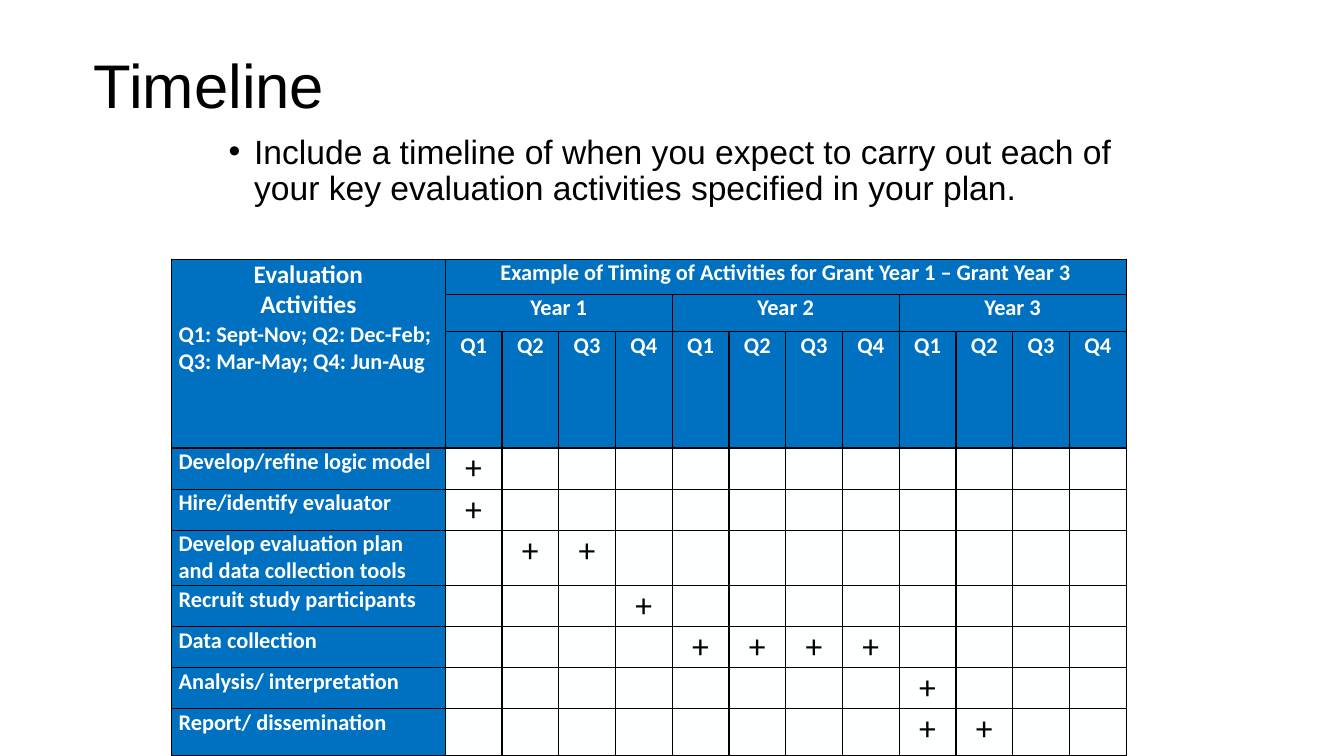
from lxml import etree
from pptx import Presentation
from pptx import util as u
from pptx.dml.color import RGBColor
from pptx.enum import text
from pptx.oxml import ns

BLACK = RGBColor(0x00, 0x00, 0x00)
WHITE = RGBColor(0xFF, 0xFF, 0xFF)
BLUE = RGBColor(0x00, 0x70, 0xC0)
NEAR_WHITE = RGBColor(0xFE, 0xFF, 0xFF)

QUARTERS = 4
YEARS = 3
HEADER_ROWS = 3
ROW_HEIGHTS = [0.89, 0.94, 1.32, 1.02, 1.02, 1.4, 1.02, 1.02, 1.02, 1.19]
ACTIVITY_WIDTH, QUARTER_WIDTH = 6.9, 1.43

# Each activity with the quarters, counted from the start of year 1, it runs in
ACTIVITIES = [
    ("Develop/refine logic model", [1]),
    ("Hire/identify evaluator", [1]),
    ("Develop evaluation plan and data collection tools", [2, 3]),
    ("Recruit study participants", [4]),
    ("Data collection", [5, 6, 7, 8]),
    ("Analysis/ interpretation", [9]),
    ("Report/ dissemination", [9, 10]),
]


class TimelineSlide:
    heading_font = "Arial"
    table_font = "Calibri"

    def __init__(self, presentation):
        self.slide = presentation.slides.add_slide(presentation.slide_layouts[1])

    def format_paragraph(self, paragraph, font_name, size, color, bold=False,
                         align=text.PP_ALIGN.LEFT):
        paragraph.alignment = align
        for run in paragraph.runs:
            run.font.name = font_name
            run.font.size = u.Pt(size)
            run.font.bold = bold
            run.font.color.rgb = color

    def fill_placeholder(self, shape, words, box, size, anchor):
        shape.left, shape.top, shape.width, shape.height = map(u.Cm, box)
        frame = shape.text_frame
        frame.text = words
        frame.auto_size = text.MSO_AUTO_SIZE.NONE
        frame.vertical_anchor = anchor
        paragraph = frame.paragraphs[0]
        paragraph.line_spacing = 0.9
        self.format_paragraph(paragraph, self.heading_font, size, BLACK)
        return paragraph

    def title(self, words, box):
        self.fill_placeholder(self.slide.shapes.title, words, box, 44,
                              text.MSO_ANCHOR.MIDDLE)

    def bullet(self, words, box):
        paragraph = self.fill_placeholder(self.slide.placeholders[1], words, box, 24,
                                          text.MSO_ANCHOR.TOP)
        paragraph.space_before = u.Pt(10)
        properties = paragraph._p.get_or_add_pPr()
        indent = u.Cm(0.64)
        properties.set("marL", str(indent))
        properties.set("indent", str(-indent))
        bullet = etree.SubElement(properties, ns.qn("a:buChar"))
        bullet.set("char", "•")

    def table(self, left, top, row_heights, column_widths):
        """Add a table of empty, bordered cells."""
        table = self.slide.shapes.add_table(
            len(row_heights), len(column_widths), u.Cm(left), u.Cm(top),
            u.Cm(sum(column_widths)), u.Cm(sum(row_heights))).table
        table.first_row = table.horz_banding = False
        for row, height in zip(table.rows, row_heights):
            row.height = u.Cm(height)
        for column, width in zip(table.columns, column_widths):
            column.width = u.Cm(width)
        for cell in table.iter_cells():
            cell.margin_left = cell.margin_right = u.Cm(0.18)
            cell.margin_top = cell.margin_bottom = 0
            self.border(cell)
            self.fill(cell, NEAR_WHITE)
        return table

    def border(self, cell):
        properties = cell._tc.get_or_add_tcPr()
        for side in ("lnL", "lnR", "lnT", "lnB"):
            line = etree.SubElement(properties, ns.qn(f"a:{side}"), w=str(u.Pt(1)))
            fill = etree.SubElement(line, ns.qn("a:solidFill"))
            etree.SubElement(fill, ns.qn("a:srgbClr"), val=str(BLACK))

    def fill(self, cell, color):
        cell.fill.solid()
        cell.fill.fore_color.rgb = color

    def header(self, cell, words, align=text.PP_ALIGN.CENTER):
        self.fill(cell, BLUE)
        cell.text_frame.text = words
        for paragraph in cell.text_frame.paragraphs:
            self.format_paragraph(paragraph, self.table_font, 16, WHITE, True, align)

    def mark(self, cell):
        cell.text_frame.text = "+"
        self.format_paragraph(cell.text_frame.paragraphs[0], self.table_font, 24,
                              BLACK, align=text.PP_ALIGN.CENTER)


def add_headings(page, table):
    last_column = YEARS * QUARTERS
    corner = table.cell(0, 0)
    corner.merge(table.cell(HEADER_ROWS - 1, 0))
    page.header(corner, "Evaluation\nActivities\n"
                        "Q1: Sept-Nov; Q2: Dec-Feb; Q3: Mar-May; Q4: Jun-Aug")
    *names, key = corner.text_frame.paragraphs
    key.alignment = text.PP_ALIGN.LEFT
    for paragraph in names:
        paragraph.runs[0].font.size = u.Pt(18)

    table.cell(0, 1).merge(table.cell(0, last_column))
    page.header(table.cell(0, 1),
                "Example of Timing of Activities for Grant Year 1 – Grant Year 3")
    for year in range(YEARS):
        first = 1 + year * QUARTERS
        table.cell(1, first).merge(table.cell(1, first + QUARTERS - 1))
        page.header(table.cell(1, first), f"Year {year + 1}")
        for quarter in range(QUARTERS):
            page.header(table.cell(2, first + quarter), f"Q{quarter + 1}")


def main():
    presentation = Presentation()
    presentation.slide_width, presentation.slide_height = u.Cm(33.87), u.Cm(19.05)
    page = TimelineSlide(presentation)
    page.title("Timeline", (2.11, 0.38, 29.21, 3.68))
    page.bullet("Include a timeline of when you expect to carry out each of your key "
                "evaluation activities specified in your plan.",
                (5.51, 3.28, 22.86, 14.1))

    column_widths = [ACTIVITY_WIDTH] + [QUARTER_WIDTH] * (YEARS * QUARTERS)
    table = page.table(4.32, 6.53, ROW_HEIGHTS, column_widths)
    add_headings(page, table)
    for row, (activity, quarters) in enumerate(ACTIVITIES, start=HEADER_ROWS):
        page.header(table.cell(row, 0), activity, text.PP_ALIGN.LEFT)
        for quarter in quarters:
            page.mark(table.cell(row, quarter))
    presentation.save("out.pptx")


if __name__ == "__main__":
    main()
